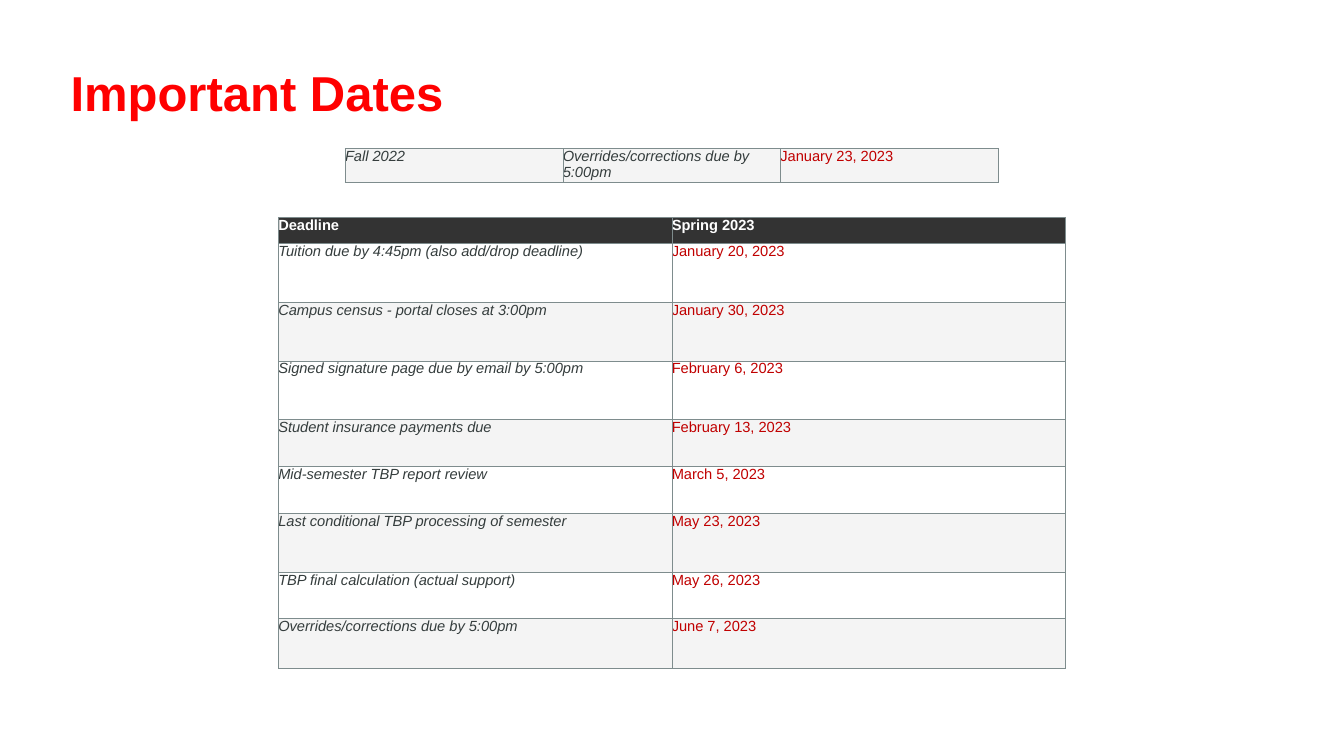
from lxml.etree import SubElement
from pptx import Presentation
from pptx.dml.color import RGBColor
from pptx.enum.text import MSO_ANCHOR, MSO_AUTO_SIZE, PP_ALIGN
from pptx.oxml import parse_xml
from pptx.oxml.ns import nsdecls, qn
from pptx.util import Pt

COLORS = {
    "title": "FF0000", "head": "333333", "white": "FFFFFF", "band": "F4F4F4",
    "label": "353D3D", "date": "C00000", "rule": "7E8C8D",
}

LABEL = {"color": "label", "italic": True}
DATE = {"color": "date"}
HEAD = {"color": "white", "bold": True}

# Deadline, date and row height
DATES = [
    ("Tuition due by 4:45pm (also add/drop deadline)", "January 20, 2023", 42),
    ("Campus census - portal closes at 3:00pm", "January 30, 2023", 42),
    ("Signed signature page due by email by 5:00pm", "February 6, 2023", 42),
    ("Student insurance payments due", "February 13, 2023", 33.4),
    ("Mid-semester TBP report review", "March 5, 2023", 33.4),
    ("Last conditional TBP processing of semester", "May 23, 2023", 42),
    ("TBP final calculation (actual support)", "May 26, 2023", 33.4),
    ("Overrides/corrections due by 5:00pm", "June 7, 2023", 35.2),
]


def write(frame, text, size=10.5, color="label", bold=False, italic=False, lead=1.0):
    frame.word_wrap = True
    para = frame.paragraphs[0]
    para.alignment = PP_ALIGN.LEFT
    para.line_spacing = lead
    run = para.add_run()
    run.text = text
    font = run.font
    font.name, font.size = "Arial", Pt(size)
    font.bold, font.italic = bold, italic
    font.color.rgb = RGBColor.from_string(COLORS[color])


def border(cell):
    props = cell._tc.get_or_add_tcPr()
    for spot, side in enumerate(("lnL", "lnR", "lnT", "lnB")):
        line = parse_xml(f'<a:{side} {nsdecls("a")} w="4800"/>')
        fill = SubElement(line, qn("a:solidFill"))
        SubElement(fill, qn("a:srgbClr"), val=COLORS["rule"])
        props.insert(spot, line)


def add_grid(slide, box, rows):
    """Each row is (height, fill, [(text, format), ...])."""
    left, top, width = box
    count = len(rows[0][2])
    total = sum(row[0] for row in rows)
    table = slide.shapes.add_table(
        len(rows), count, Pt(left), Pt(top), Pt(width), Pt(total)).table
    for col in table.columns:
        col.width = Pt(width / count)
    for r, (height, fill, items) in enumerate(rows):
        table.rows[r].height = Pt(height)
        for c, (text, style) in enumerate(items):
            cell = table.cell(r, c)
            cell.margin_left = cell.margin_right = 0
            cell.margin_top = cell.margin_bottom = 0
            cell.vertical_anchor = MSO_ANCHOR.TOP
            cell.fill.solid()
            cell.fill.fore_color.rgb = RGBColor.from_string(COLORS[fill])
            border(cell)
            write(cell.text_frame, text, **style)


def add_title(slide, box):
    title = slide.shapes.title
    title.left, title.top, title.width, title.height = map(Pt, box)
    frame = title.text_frame
    frame.auto_size = MSO_AUTO_SIZE.NONE
    frame.vertical_anchor = MSO_ANCHOR.BOTTOM
    write(frame, "Important Dates", size=35, color="title", bold=True, lead=0.9)


def add_fall(slide, box):
    items = [("Fall 2022", LABEL),
             ("Overrides/corrections due by 5:00pm", LABEL),
             ("January 23, 2023", DATE)]
    add_grid(slide, box, [(24.5, "band", items)])


def add_spring(slide, box):
    rows = [(18.4, "head", [("Deadline", HEAD), ("Spring 2023", HEAD)])]
    for i, (label, date, height) in enumerate(DATES):
        fill = "band" if i % 2 else "white"
        rows.append((height, fill, [(label, LABEL), (date, DATE)]))
    add_grid(slide, box, rows)


def main():
    deck = Presentation()
    deck.slide_width, deck.slide_height = Pt(960), Pt(540)
    slide = deck.slides.add_slide(deck.slide_layouts[5])
    add_title(slide, (43.2, 29.5, 309.6, 61.2))
    add_spring(slide, (198.8, 155.3, 562.2))
    add_fall(slide, (246.5, 106, 466.5))
    deck.save("out.pptx")


if __name__ == "__main__":
    main()
